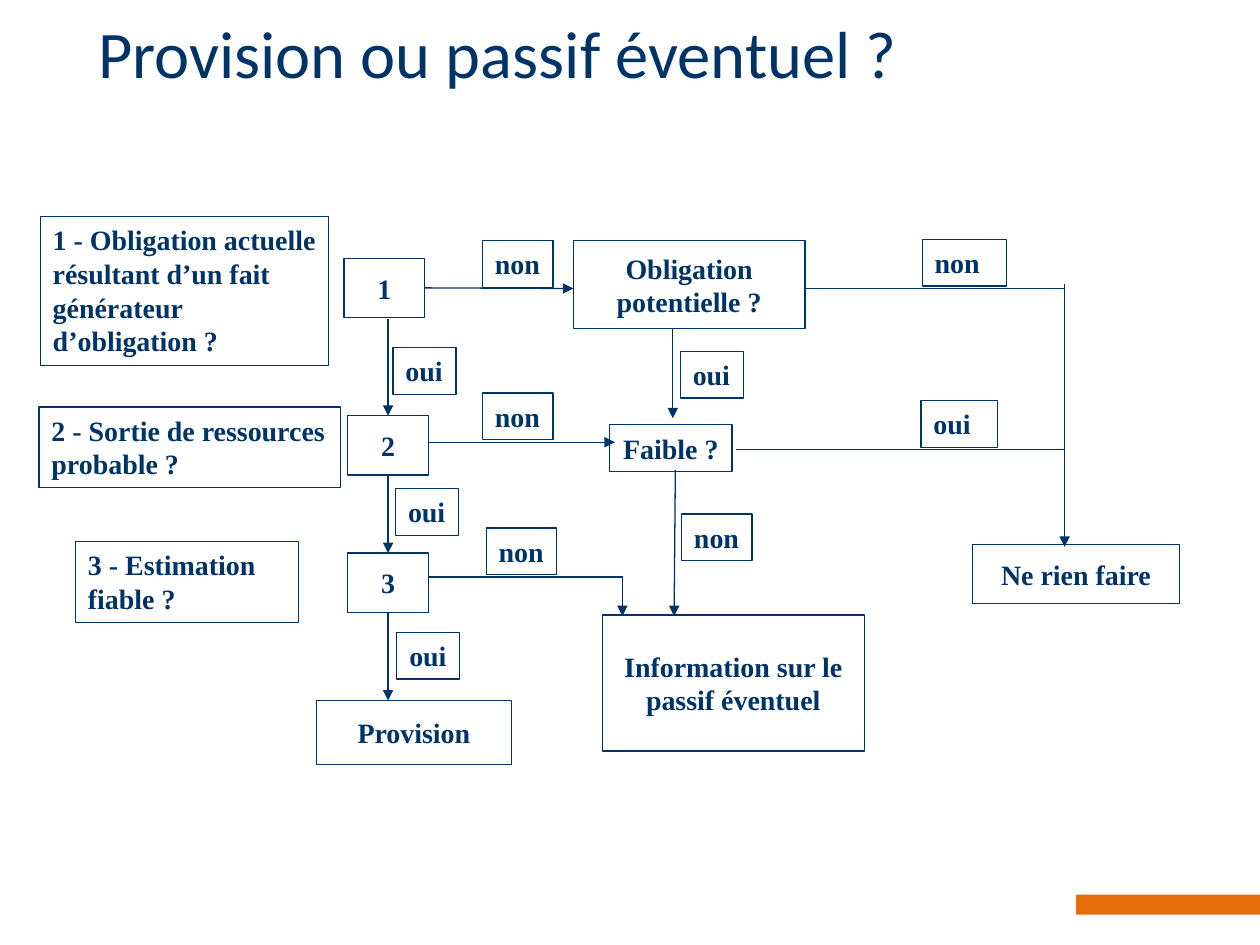
from pptx import Presentation, util as u
from pptx.dml.color import RGBColor
from pptx.enum import shapes, text
from pptx.oxml.ns import qn
from lxml import etree

HUES = {"navy": "003368", "orange": "E46C0A"}
TOP, LEFT, BOTTOM, RIGHT = range(4)


class Board:
    """Style and current slide of the decision chart."""
    face, size, width = "Times New Roman", 16, 0.75

    def __init__(self, slide):
        self.slide = slide

    def hue(self, name):
        return RGBColor.from_string(HUES[name])

    def fill_in(self, frame, words, face, size, bold, align):
        para = frame.paragraphs[0]
        para.alignment = align
        run = para.add_run()
        run.text = words
        font = run.font
        font.name, font.size, font.bold = face, u.Pt(size), bold
        font.color.rgb = self.hue("navy")

    def rect(self, spot):
        shape = self.slide.shapes.add_shape(
            shapes.MSO_SHAPE.RECTANGLE, *map(u.Inches, spot))
        shape.shadow.inherit = False
        return shape

    def bar(self, *spot):
        shape = self.rect(spot)
        shape.fill.solid()
        shape.fill.fore_color.rgb = self.hue("orange")
        shape.line.fill.background()

    def title(self, words, *spot):
        frame = self.slide.shapes.add_textbox(*map(u.Inches, spot)).text_frame
        frame.word_wrap = True
        self.fill_in(frame, words, "Calibri", 38, False, text.PP_ALIGN.LEFT)

    def box(self, words, *spot, mid=True, wrap=False, grow=False):
        shape = self.rect(spot)
        shape.fill.background()
        shape.line.color.rgb = self.hue("navy")
        shape.line.width = u.Pt(self.width)
        frame = shape.text_frame
        frame.word_wrap = wrap
        if grow:
            frame.auto_size = text.MSO_AUTO_SIZE.SHAPE_TO_FIT_TEXT
        anchor, align = text.MSO_ANCHOR, text.PP_ALIGN
        frame.vertical_anchor = anchor.MIDDLE if mid else anchor.TOP
        self.fill_in(frame, words, self.face, self.size, True,
                     align.CENTER if mid else align.LEFT)
        return shape

    def label(self, words, *spot, wrap=False):
        self.box(words, *spot, mid=False, wrap=wrap, grow=True)

    def link(self, x1, y1, x2, y2, head=True, start=None, end=None):
        line = self.slide.shapes.add_connector(
            shapes.MSO_CONNECTOR.STRAIGHT, *map(u.Inches, (x1, y1, x2, y2)))
        line.line.color.rgb = self.hue("navy")
        line.line.width = u.Pt(self.width)
        props = line._element.spPr
        if head:
            tip = etree.SubElement(props.find(qn("a:ln")), qn("a:tailEnd"))
            tip.set("type", "triangle")
        etree.SubElement(props, qn("a:effectLst"))
        if start:
            line.begin_connect(*start)
        if end:
            line.end_connect(*end)


def main():
    deck = Presentation()
    deck.slide_width, deck.slide_height = u.Inches(10), u.Inches(7.5)
    board = Board(deck.slides.add_slide(deck.slide_layouts[6]))

    # Footer accent and title
    board.bar(8.54, 7.1, 1.46, 0.16)
    board.title("Provision ou passif éventuel ?", 0.68, 0.05, 8.58, 1.06)

    # Questions on the left
    for words, *spot in (
            ("1 - Obligation actuelle résultant d’un fait générateur "
             "d’obligation ?", 0.32, 1.72, 2.29, 1.18),
            ("2 - Sortie de ressources probable ?", 0.31, 3.23, 2.39, 0.64),
            ("3 - Estimation fiable ?", 0.6, 4.3, 1.77, 0.64)):
        board.label(words, *spot, wrap=True)

    # Numbered steps
    one, two, three = [
        board.box(num, x, y, 0.64, 0.47)
        for num, x, y in (("1", 2.73, 2.05), ("2", 2.76, 3.3),
                          ("3", 2.76, 4.39))]

    # Tests and outcomes
    board.box("Obligation potentielle ?", 4.55, 1.91, 1.84, 0.7, wrap=True)
    board.box("Faible ?", 4.84, 3.37, 0.97, 0.37, grow=True)
    board.box("Information sur le passif éventuel", 4.78, 4.88, 2.08, 1.08,
              wrap=True)
    board.box("Provision", 2.51, 5.56, 1.55, 0.51)
    board.box("Ne rien faire", 7.72, 4.32, 1.64, 0.47)

    # Path down through the steps
    board.link(3.08, 2.53, 3.08, 3.3, end=(two, TOP))
    board.link(3.08, 3.77, 3.08, 4.39, start=(two, BOTTOM), end=(three, TOP))
    board.link(3.08, 4.86, 3.08, 5.56, start=(three, BOTTOM))

    # Paths from the steps to the right
    board.link(3.37, 2.29, 4.55, 2.29, start=(one, RIGHT))
    board.link(3.4, 3.51, 4.88, 3.51)
    board.link(3.4, 4.58, 4.94, 4.58, head=False)
    board.link(4.94, 4.57, 4.94, 4.89)

    # Paths from the tests
    board.link(5.34, 2.61, 5.34, 3.32)
    board.link(5.36, 3.73, 5.35, 4.89)
    board.link(6.39, 2.29, 8.45, 2.29, head=False)
    board.link(5.84, 3.57, 8.45, 3.57, head=False)
    board.link(8.45, 2.25, 8.45, 4.34)

    # Answers
    for x, y in ((5.41, 4.08), (3.83, 1.91), (3.83, 3.12), (3.86, 4.19)):
        board.label("non", x, y, 0.56, 0.37)
    for x, y in ((5.4, 2.79), (3.12, 2.76), (3.14, 3.88), (3.15, 5.02)):
        board.label("oui", x, y, 0.5, 0.37)
    board.label("non", 7.32, 1.9, 0.67, 0.37, wrap=True)
    board.label("oui", 7.31, 3.18, 0.61, 0.37, wrap=True)

    deck.save("out.pptx")


if __name__ == "__main__":
    main()
